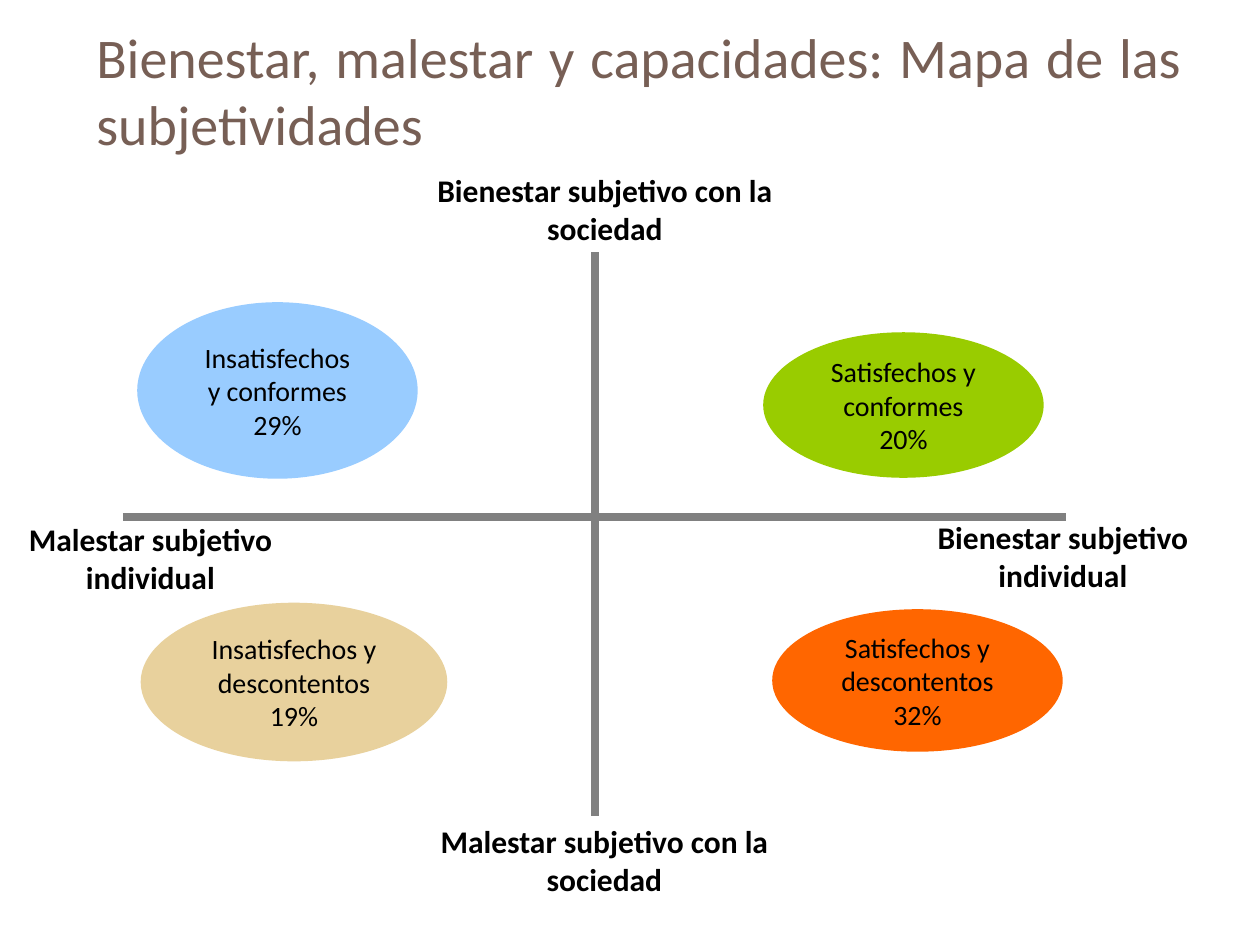
from dataclasses import dataclass

from lxml import etree
from pptx import Presentation
from pptx.dml.color import RGBColor
from pptx.enum.shapes import MSO_CONNECTOR, MSO_SHAPE
from pptx.enum.text import MSO_ANCHOR, PP_ALIGN
from pptx.oxml.ns import qn
from pptx.util import Emu, Pt

STRAIGHT = MSO_CONNECTOR.STRAIGHT
OVAL = MSO_SHAPE.OVAL
TOP, MIDDLE = MSO_ANCHOR.TOP, MSO_ANCHOR.MIDDLE
CENTER, JUSTIFY = PP_ALIGN.CENTER, PP_ALIGN.JUSTIFY

EMU_PER_PX = 914400 // 126
BLANK_LAYOUT = 6


def px(length):
    return Emu(round(length * 914400 / 126))


@dataclass(frozen=True)
class Theme:
    font: str = "Calibri"
    title: str = "775F55"
    ink: str = "000000"
    axis: str = "808080"
    blue: str = "99CCFF"
    green: str = "99CC00"
    sand: str = "E8D19D"
    orange: str = "FF6600"
    title_size: int = 32
    label_size: int = 18
    group_size: int = 16


def write_text(frame, text, *, font, size, color, bold=False, align=CENTER, anchor=TOP):
    """Fill a text frame, with one paragraph for each line of text."""
    frame.word_wrap = True
    frame.vertical_anchor = anchor
    for index, line in enumerate(text.split("\n")):
        para = frame.paragraphs[0] if index == 0 else frame.add_paragraph()
        para.alignment = align
        span = para.add_run()
        span.text = line
        span.font.name = font
        span.font.size = Pt(size)
        span.font.bold = bold
        span.font.color.rgb = RGBColor.from_string(color)


class SlideBuilder:
    def __init__(self, page, theme):
        self.page = page
        self.theme = theme

    def text_box(self, area, text, **style):
        box = self.page.shapes.add_textbox(*map(px, area))
        write_text(box.text_frame, text, font=self.theme.font, **style)

    def title(self, area, text):
        self.text_box(area, text, size=self.theme.title_size,
                      color=self.theme.title, align=JUSTIFY)

    def axis_label(self, area, text):
        self.text_box(area, text, size=self.theme.label_size,
                      color=self.theme.ink, bold=True)

    def axis(self, start, end):
        line = self.page.shapes.add_connector(STRAIGHT, *map(px, start + end))
        line.line.color.rgb = RGBColor.from_string(self.theme.axis)
        line.line.width = Pt(4.5)
        etree.SubElement(line.line._get_or_add_ln().getparent(), qn("a:effectLst"))

    def group_oval(self, area, text, color, outline=2):
        oval = self.page.shapes.add_shape(OVAL, *map(px, area))
        oval.shadow.inherit = False
        oval.fill.solid()
        oval.fill.fore_color.rgb = RGBColor.from_string(color)
        oval.line.color.rgb = RGBColor.from_string(color)
        oval.line.width = Pt(outline)
        write_text(oval.text_frame, text, font=self.theme.font,
                   size=self.theme.group_size, color=self.theme.ink, anchor=MIDDLE)


def main():
    deck = Presentation()
    deck.slide_width, deck.slide_height = px(1260), px(945)
    theme = Theme()
    page = deck.slides.add_slide(deck.slide_layouts[BLANK_LAYOUT])
    builder = SlideBuilder(page, theme)

    builder.title((84, 16, 1111, 149),
                  "Bienestar, malestar y capacidades: Mapa de las subjetividades")

    builder.axis((123, 517), (1066, 517))
    builder.axis((595, 252), (595, 816))

    builder.axis_label((402, 165, 406, 88), "Bienestar subjetivo con la sociedad")
    builder.axis_label((416, 816, 377, 88), "Malestar subjetivo con la sociedad")
    builder.axis_label((0, 514, 301, 88), "Malestar subjetivo individual")
    builder.axis_label((915, 512, 296, 88), "Bienestar subjetivo\nindividual")

    builder.group_oval((139, 304, 277, 173), "Insatisfechos\ny conformes\n29%", theme.blue)
    builder.group_oval((765, 334, 277, 142), "Satisfechos y conformes 20%", theme.green)
    builder.group_oval((142, 604, 304, 156), "Insatisfechos y descontentos 19%",
                       theme.sand, outline=1.5)
    builder.group_oval((774, 611, 287, 139), "Satisfechos y descontentos 32%", theme.orange)

    deck.save("out.pptx")


if __name__ == "__main__":
    main()
